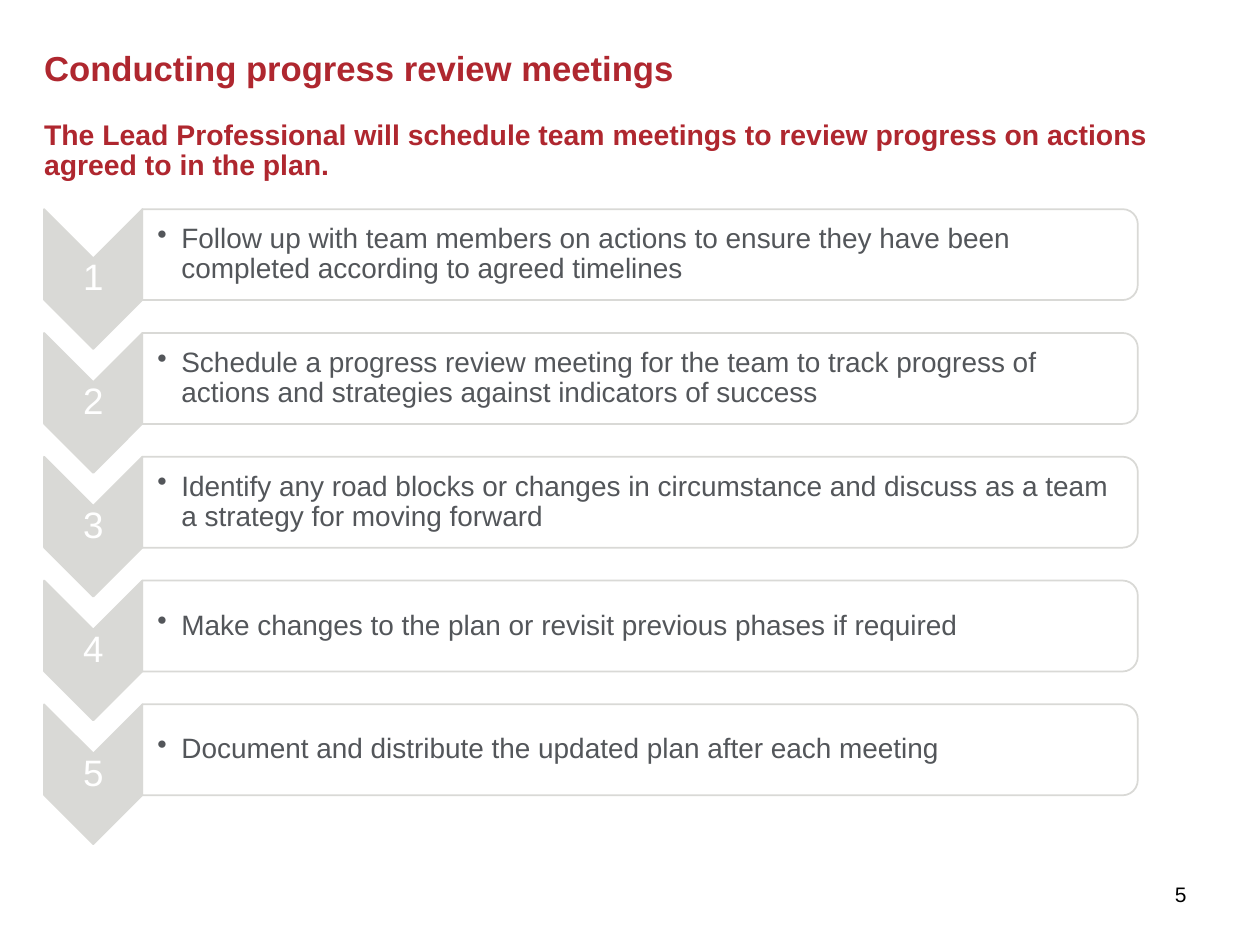
from pptx import Presentation
from pptx.dml.color import RGBColor
from pptx.enum.shapes import MSO_SHAPE
from pptx.enum.text import MSO_ANCHOR, MSO_AUTO_SIZE, PP_ALIGN
from pptx.oxml.ns import qn
from pptx.util import Inches, Pt
from lxml import etree

CHEVRON, BAR = MSO_SHAPE.CHEVRON, MSO_SHAPE.ROUND_2_SAME_RECTANGLE
TOP, MIDDLE = MSO_ANCHOR.TOP, MSO_ANCHOR.MIDDLE
LEFT, CENTER = PP_ALIGN.LEFT, PP_ALIGN.CENTER
NO_FIT = MSO_AUTO_SIZE.NONE
RED = RGBColor(0xAF, 0x27, 0x2F)
GREY = RGBColor(0xD9, 0xD9, 0xD6)
DARK = RGBColor(0x53, 0x56, 0x5A)
WHITE = RGBColor(0xFF, 0xFF, 0xFF)
BLACK = RGBColor(0, 0, 0)

STEPS = [
    "Follow up with team members on actions to ensure they have been completed according to agreed timelines",
    "Schedule a progress review meeting for the team to track progress of actions and strategies against indicators of success",
    "Identify any road blocks or changes in circumstance and discuss as a team a strategy for moving forward",
    "Make changes to the plan or revisit previous phases if required",
    "Document and distribute the updated plan after each meeting",
]


def set_frame(tf, anchor, left=0.01, other=0.01):
    tf.word_wrap = True
    tf.auto_size = NO_FIT
    tf.vertical_anchor = anchor
    tf.margin_left = Inches(left)
    tf.margin_top = tf.margin_right = tf.margin_bottom = Inches(other)


def style(p, size, color, align=LEFT, bold=False):
    p.alignment = align
    p.line_spacing = 0.9
    for r in p.runs:
        f = r.font
        f.name, f.size, f.bold = "Arial", Pt(size), bold
        f.color.rgb = color


def add_text(s, box, text, size, color, align=LEFT, left=0.01):
    sp = s.shapes.add_textbox(*map(Inches, box))
    set_frame(sp.text_frame, MIDDLE, left)
    p = sp.text_frame.paragraphs[0]
    p.text = text
    style(p, size, color, align)
    return p


def add_turned(s, kind, box, fill):
    x, y, w, h = box
    sp = s.shapes.add_shape(kind, Inches(x + (w - h) / 2), Inches(y + (h - w) / 2),
                            Inches(h), Inches(w))
    sp.rotation = 90
    sp.shadow.inherit = False
    sp.fill.solid()
    sp.fill.fore_color.rgb = fill
    sp.line.color.rgb = GREY
    sp.line.width = Pt(1)
    return sp


def add_bullet(p, indent):
    pPr = p._p.get_or_add_pPr()
    pPr.set("marL", str(Inches(indent)))
    pPr.set("indent", str(-Inches(indent)))
    etree.SubElement(pPr, qn("a:buChar")).set("char", "•")


def add_title(s, box):
    sp = s.shapes.title
    sp.left, sp.top, sp.width, sp.height = map(Inches, box)
    tf = sp.text_frame
    set_frame(tf, TOP, 0, 0)
    tf.text = ("Conducting progress review meetings\n"
               "The Lead Professional will schedule team meetings to review "
               "progress on actions agreed to in the plan.")
    for p, size, before in zip(tf.paragraphs, (19.8, 16.2), (0, 18)):
        style(p, size, RED, bold=True)
        p.space_before = Pt(before)


def add_step(s, box, number, text):
    x, y, w, h = box
    arrow_w, bar_h, text_h = 0.78, h * 0.65, h * 0.59
    notch = arrow_w / 2
    add_turned(s, CHEVRON, (x, y, arrow_w, h), GREY)
    add_text(s, (x, y + notch, arrow_w, h - 2 * notch), str(number), 21, WHITE, CENTER)
    bar_x, bar_w = x + arrow_w, w - arrow_w
    bar = add_turned(s, BAR, (bar_x, y, bar_w, bar_h), WHITE)
    color = bar.fill._xPr.find(qn("a:solidFill"))[0]
    etree.SubElement(color, qn("a:alpha")).set("val", "90000")
    p = add_text(s, (bar_x, y + (bar_h - text_h) / 2, bar_w - 0.04, text_h),
                 text, 16, DARK, left=0.12)
    add_bullet(p, 0.19)


def add_steps(s, box, step_h=1.11):
    x, y, w, h = box
    pitch = (h - step_h) / (len(STEPS) - 1)
    for i, text in enumerate(STEPS):
        add_step(s, (x, y + i * pitch, w, step_h), i + 1, text)


def main():
    prs = Presentation()
    prs.slide_width, prs.slide_height = Inches(10), Inches(7.5)
    s = prs.slides.add_slide(prs.slide_layouts[5])
    add_title(s, (0.35, 0.41, 9.25, 1.26))
    add_steps(s, (0.35, 1.66, 8.68, 5.04))
    add_text(s, (9.13, 6.91, 0.48, 0.4), "5", 12, BLACK, CENTER)
    prs.save("out.pptx")


if __name__ == "__main__":
    main()
